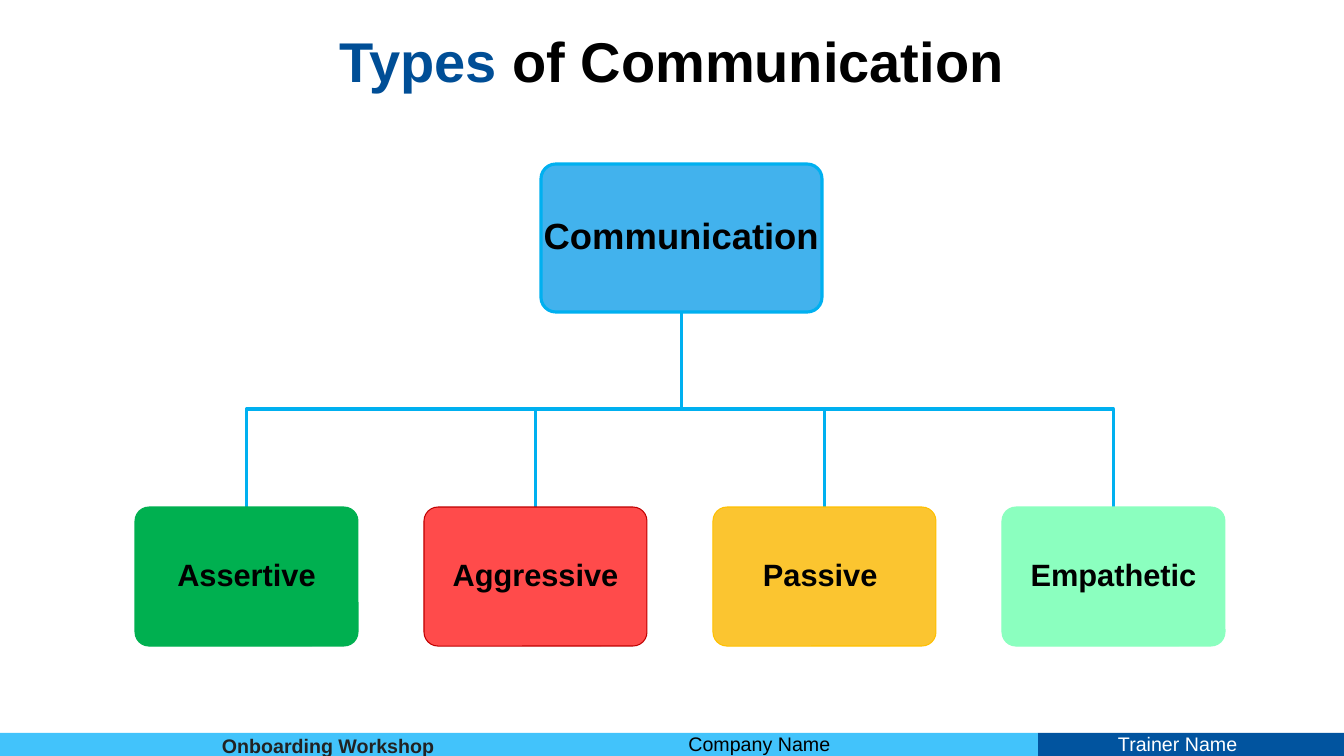
from dataclasses import dataclass

from pptx import Presentation
from pptx.dml.color import RGBColor
from pptx.enum.shapes import MSO_SHAPE as Shape
from pptx.enum.text import MSO_ANCHOR as Anchor, PP_ALIGN as Align
from pptx.util import Inches, Pt

PX = Inches(1) / 100.8
SLIDE_WIDTH, SLIDE_HEIGHT = 1344, 756


@dataclass(frozen=True)
class Theme:
    font: str = "Arial"
    black: str = "000000"
    white: str = "FFFFFF"
    charcoal: str = "222222"
    title_blue: str = "004E96"
    footer_dark: str = "01549F"
    footer_light: str = "42C3FB"
    root_fill: str = "42B2ED"
    branch_line: str = "00B0F0"
    title_size: int = 40
    root_size: int = 26
    type_size: int = 22
    footer_size: int = 14
    thick: float = 2.25
    thin: float = 0.75


THEME = Theme()

# Name, fill and outline of each type
TYPES = [
    ("Assertive", "00B050", "00B050"),
    ("Aggressive", "FF4B4B", "C00000"),
    ("Passive ", "FBC530", "FFC000"),
    ("Empathetic", "8BFFBF", "8BFFBF"),
]

# Text, left, top, width, colour and weight of each footer label
FOOTER_LABELS = [
    (" Company Name", 673, 727, 248, THEME.black, False),
    (" Trainer Name", 1103, 727, 241, THEME.white, False),
    ("Onboarding Workshop", 212, 729, 362, THEME.charcoal, True),
]


def px(*lengths):
    """Turn whole px into EMU."""
    return [round(length * PX) for length in lengths]


def write(paragraph, text, *, size, color=THEME.black, bold=False, align=None, spacing=None):
    """Add one formatted run to a paragraph."""
    run = paragraph.add_run()
    run.text = text
    run.font.name = THEME.font
    run.font.size = Pt(size)
    run.font.bold = bold
    run.font.color.rgb = RGBColor.from_string(color)
    if align is not None:
        paragraph.alignment = align
    if spacing is not None:
        paragraph.line_spacing = spacing


def add_box(slide, kind, left, top, width, height, fill, line=None, weight=0):
    """Add a filled preset shape, outlined when a line colour is given."""
    shape = slide.shapes.add_shape(kind, *px(left, top, width, height))
    shape.shadow.inherit = False
    shape.fill.solid()
    shape.fill.fore_color.rgb = RGBColor.from_string(fill)
    if line:
        shape.line.color.rgb = RGBColor.from_string(line)
        shape.line.width = Pt(weight)
    else:
        shape.line.fill.background()
    return shape


def add_node(slide, text, left, top, width, height, fill, line, weight, size):
    """Add a rounded chart node with its centred name."""
    node = add_box(slide, Shape.ROUNDED_RECTANGLE, left, top, width, height, fill, line, weight)
    node.adjustments[0] = 0.1
    frame = node.text_frame
    frame.word_wrap = False
    frame.vertical_anchor = Anchor.MIDDLE
    frame.margin_left = frame.margin_right = 0
    write(frame.paragraphs[0], text, size=size, bold=True, align=Align.CENTER, spacing=0.9)


def add_branch(slide, start_x, start_y, bus_y, end_x, end_y):
    """Add a stepped line from the root node down to a type node."""
    builder = slide.shapes.build_freeform(*px(start_x, start_y))
    corners = [(start_x, bus_y), (end_x, bus_y), (end_x, end_y)]
    builder.add_line_segments([px(*corner) for corner in corners], close=False)
    branch = builder.convert_to_shape()
    branch.shadow.inherit = False
    branch.fill.background()
    branch.line.color.rgb = RGBColor.from_string(THEME.branch_line)
    branch.line.width = Pt(THEME.thick)


def add_footer(slide):
    top, split = 733, 1038
    height = SLIDE_HEIGHT - top
    add_box(slide, Shape.RECTANGLE, split, top, SLIDE_WIDTH - split, height, THEME.footer_dark)
    add_box(slide, Shape.RECTANGLE, 0, top, split, height, THEME.footer_light)
    for text, left, label_top, width, color, bold in FOOTER_LABELS:
        area = px(left, label_top, width, SLIDE_HEIGHT - label_top)
        frame = slide.shapes.add_textbox(*area).text_frame
        frame.word_wrap = True
        write(frame.paragraphs[0], text, size=THEME.footer_size, color=color, bold=bold)


def add_title(slide):
    title = slide.shapes.title
    title.left, title.top, title.width, title.height = px(92, 27, 1159, 74)
    title.text_frame.vertical_anchor = Anchor.MIDDLE
    paragraph = title.text_frame.paragraphs[0]
    write(paragraph, "Types", size=THEME.title_size, color=THEME.title_blue, bold=True,
          align=Align.CENTER, spacing=0.9)
    write(paragraph, " of Communication", size=THEME.title_size, bold=True)


def add_type_chart(slide):
    # Root node
    root_left, root_top, root_width, root_height = 541, 164, 281, 148
    add_node(slide, "Communication", root_left, root_top, root_width, root_height,
             THEME.root_fill, THEME.branch_line, THEME.thick, THEME.root_size)
    root_center, root_bottom = root_left + root_width / 2, root_top + root_height

    # Evenly spaced type nodes, each with its branch
    first_left, pitch, top, width, height = 135, 289, 507, 223, 139
    bus_y = (root_bottom + top) // 2
    for index, (name, fill, line) in enumerate(TYPES):
        left = first_left + index * pitch
        add_branch(slide, root_center, root_bottom, bus_y, left + width / 2, top)
        add_node(slide, name, left, top, width, height, fill, line, THEME.thin, THEME.type_size)


def main():
    presentation = Presentation()
    presentation.slide_width, presentation.slide_height = px(SLIDE_WIDTH, SLIDE_HEIGHT)
    slide = presentation.slides.add_slide(presentation.slide_layouts[5])
    add_footer(slide)
    add_title(slide)
    add_type_chart(slide)
    presentation.save("out.pptx")


if __name__ == "__main__":
    main()
